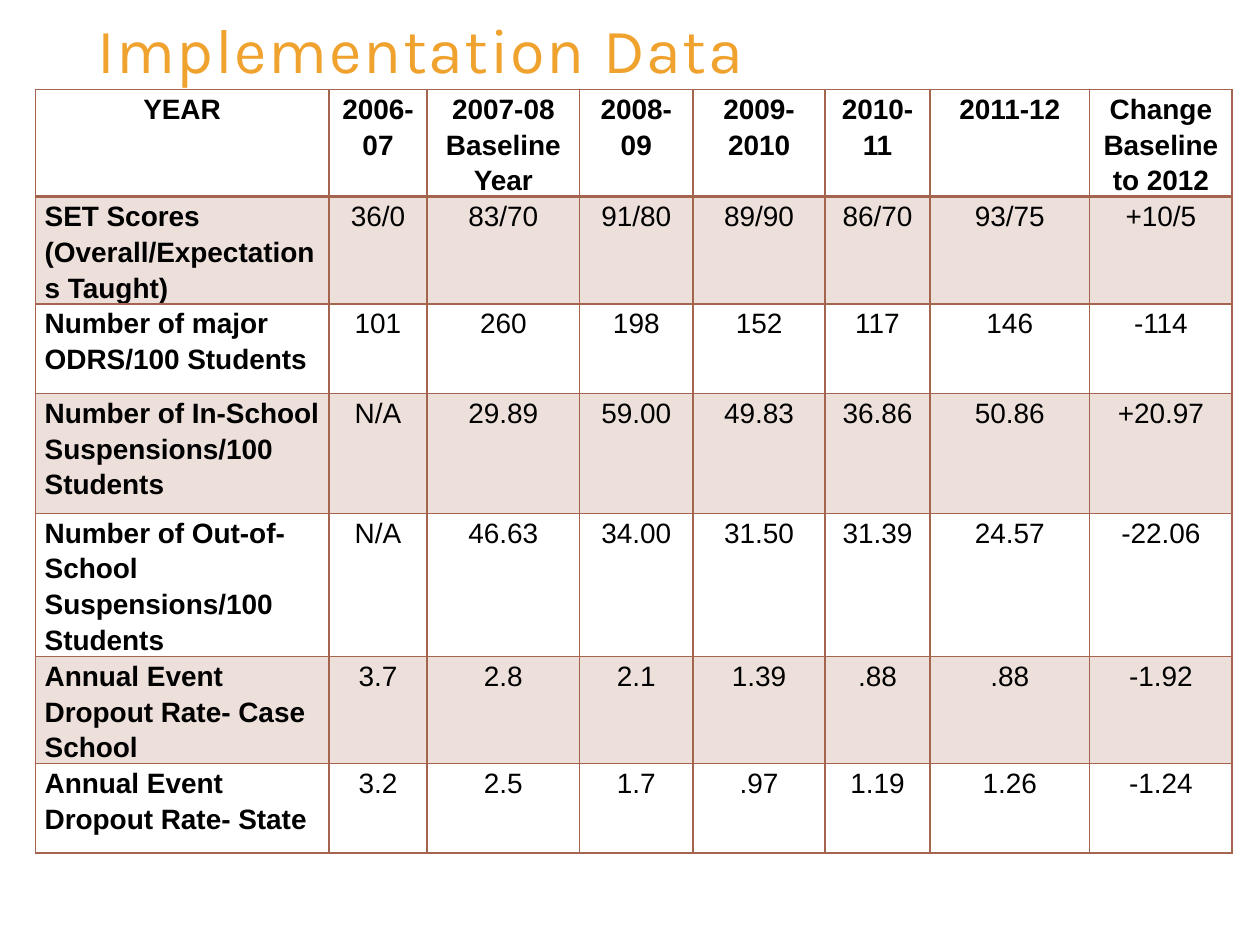
import pptx
import pptx.dml.color
import pptx.enum.text
import pptx.oxml
import pptx.oxml.ns
import pptx.util
from lxml import etree

Pt = pptx.util.Pt
RGB = pptx.dml.color.RGBColor.from_string
ALIGN = pptx.enum.text.PP_ALIGN
ANCHOR = pptx.enum.text.MSO_ANCHOR
qn = pptx.oxml.ns.qn

THEME = {
    "title": {"font": "Karla", "size": 36, "color": "F0A22E"},
    "cell": {"font": "Arial", "size": 16, "color": "000000"},
    "rule": "A5644E",
    "band_opacity": 20,
}

COLUMN_WIDTHS = [167.76, 56.16, 87.12, 64.8, 75.6, 59.76, 91.44, 81.36]
ROW_HEIGHTS = [51.12, 51.12, 51.12, 68.4, 68.4, 51.12, 51.12]
ROWS = [
    ["YEAR", "2006-07", "2007-08\nBaseline Year", "2008-09", "2009-2010",
     "2010-11", "2011-12", "Change Baseline to 2012"],
    ["SET Scores (Overall/Expectations Taught)",
     "36/0", "83/70", "91/80", "89/90", "86/70", "93/75", "+10/5"],
    ["Number of major ODRS/100 Students",
     "101", "260", "198", "152", "117", "146", "-114"],
    ["Number of In-School Suspensions/100 Students",
     "N/A", "29.89", "59.00", "49.83", "36.86", "50.86", "+20.97"],
    ["Number of Out-of-School Suspensions/100 Students",
     "N/A", "46.63", "34.00", "31.50", "31.39", "24.57", "-22.06"],
    ["Annual Event Dropout Rate- Case School",
     "3.7", "2.8", "2.1", "1.39", ".88", ".88", "-1.92"],
    ["Annual Event Dropout Rate- State",
     "3.2", "2.5", "1.7", ".97", "1.19", "1.26", "-1.24"],
]


def write(frame, text, *, font, size, color, bold=False, align=ALIGN.LEFT,
          line=1.0, before=0, tracking=0):
    """Fill a text frame, one paragraph per line; tracking is in points."""
    frame.word_wrap = True
    for index, words in enumerate(text.split("\n")):
        para = frame.add_paragraph() if index else frame.paragraphs[0]
        para.alignment = align
        para.line_spacing = line
        para.space_before = Pt(before)
        span = para.add_run()
        span.text = words
        span.font.name = font
        span.font.size = Pt(size)
        span.font.bold = bold
        span.font.color.rgb = RGB(color)
        if tracking:
            span.font._element.set("spc", str(int(tracking * 100)))


def add_border(cell, side, width):
    """Rule one side of a cell: L, R, T or B. Call before setting the fill."""
    rule = etree.SubElement(cell._tc.get_or_add_tcPr(), qn(f"a:ln{side}"), w=str(Pt(width)))
    fill = etree.SubElement(rule, qn("a:solidFill"))
    etree.SubElement(fill, qn("a:srgbClr"), val=THEME["rule"])


deck = pptx.Presentation()
deck.slide_width, deck.slide_height = Pt(720), Pt(540)
page = deck.slides.add_slide(deck.slide_layouts[5])

title = page.shapes.title
title.left, title.top, title.width, title.height = Pt(48.24), Pt(2.16), Pt(499.68), Pt(103.68)
title.text_frame.vertical_anchor = ANCHOR.TOP
write(title.text_frame, "Implementation Data", tracking=1, **THEME["title"])

table_frame = page.shapes.add_table(len(ROWS), len(COLUMN_WIDTHS), Pt(20.16), Pt(51.12),
                                    Pt(sum(COLUMN_WIDTHS)), Pt(sum(ROW_HEIGHTS)))
table = table_frame.table
table.first_row = table.horz_banding = False
for column, width in zip(table.columns, COLUMN_WIDTHS):
    column.width = Pt(width)

for r, (values, height) in enumerate(zip(ROWS, ROW_HEIGHTS)):
    table.rows[r].height = Pt(height)
    for c, value in enumerate(values):
        cell = table.cell(r, c)
        cell.margin_left = cell.margin_right = Pt(5.4)
        cell.margin_top = cell.margin_bottom = 0
        cell.vertical_anchor = ANCHOR.TOP
        is_header, is_label = r == 0, c == 0
        write(cell.text_frame, value, bold=is_header or is_label,
              align=ALIGN.LEFT if is_label and not is_header else ALIGN.CENTER,
              line=1.15, before=0 if is_header else 6, **THEME["cell"])

        add_border(cell, "L", 1)
        add_border(cell, "R", 1)
        add_border(cell, "T", 2 if r == 1 else 1)
        add_border(cell, "B", 2 if is_header else 1)
        if r % 2:
            cell.fill.solid()
            cell.fill.fore_color.rgb = RGB(THEME["rule"])
            tint = cell._tc.tcPr.find(qn("a:solidFill")).find(qn("a:srgbClr"))
            etree.SubElement(tint, qn("a:alpha"), val=str(THEME["band_opacity"] * 1000))
        else:
            cell.fill.background()

deck.save("out.pptx")
